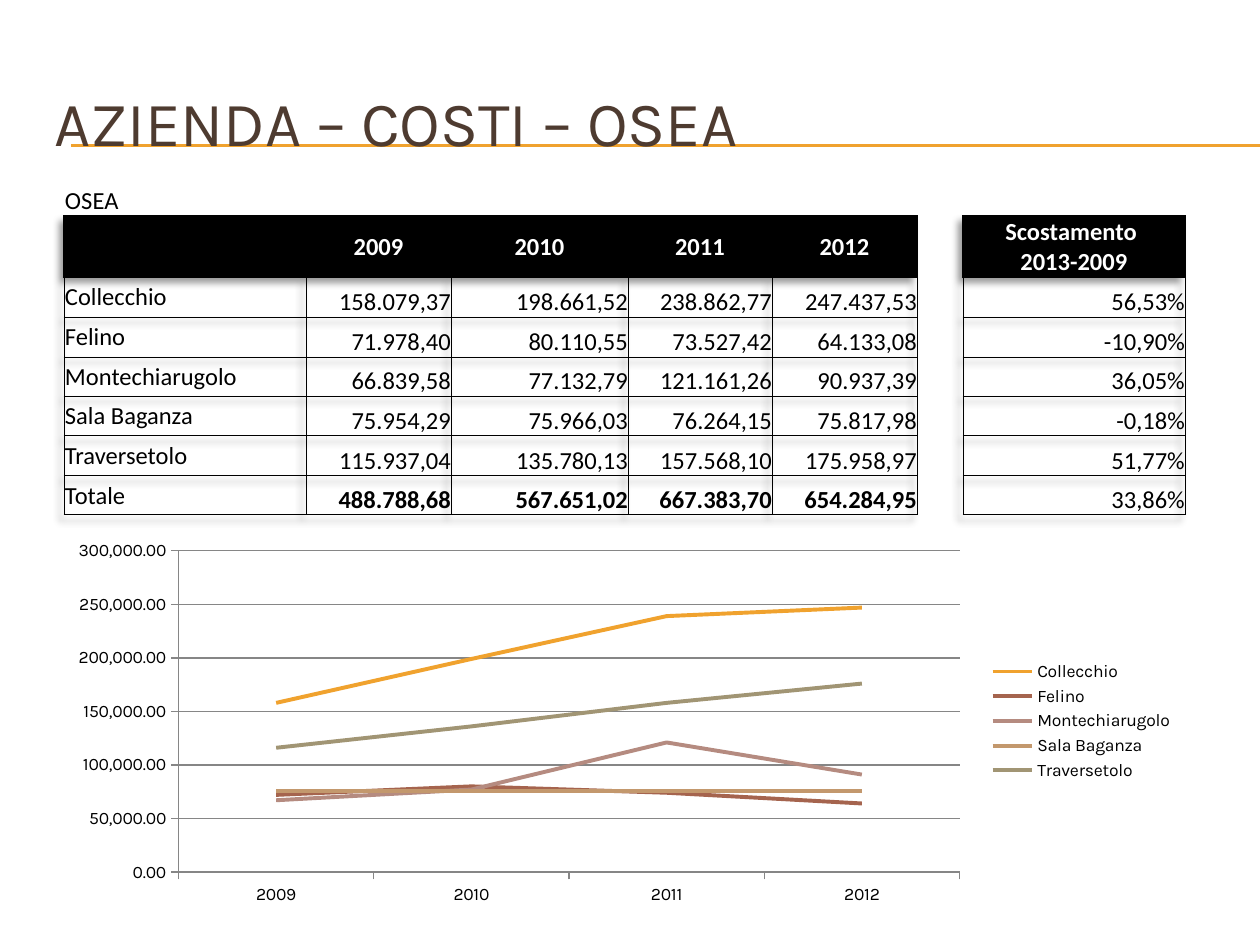
from collections import namedtuple
from lxml.etree import SubElement
from pptx import Presentation
from pptx.chart.data import CategoryChartData as ChartData
from pptx.dml.color import RGBColor as RGB
from pptx.enum.chart import XL_CHART_TYPE as Kind, XL_LEGEND_POSITION as Spot
from pptx.enum.chart import XL_TICK_MARK as Tick
from pptx.enum.shapes import MSO_CONNECTOR as Link
from pptx.enum.text import MSO_ANCHOR as Anchor, PP_ALIGN as Align
from pptx.oxml import parse_xml
from pptx.oxml.ns import nsdecls, qn
from pptx.util import Pt

Theme = namedtuple("Theme", "head body title cell chart ink black white gold grid lines")
theme = Theme(
    head="Karla", body="Calibri", title=36, cell=14, chart=10,
    ink="4E3B30", black="000000", white="FFFFFF", gold="F0A22E", grid="868686",
    lines=["F0A22E", "A5644E", "B58B80", "C3986D", "A19574"],
)
SCALE = 914400 / 126


def px(*nums):
    return [round(n * SCALE) for n in nums]


def write(para, text, font, size, color, bold=False):
    run = para.add_run()
    run.text = text
    run.font.name = font
    run.font.size = Pt(size)
    run.font.bold = bold
    run.font.color.rgb = RGB.from_string(color)


years = ["2009", "2010", "2011", "2012"]
costs = [
    ["Collecchio", "158.079,37", "198.661,52", "238.862,77", "247.437,53", "", "56,53%"],
    ["Felino", "71.978,40", "80.110,55", "73.527,42", "64.133,08", "", "-10,90%"],
    ["Montechiarugolo", "66.839,58", "77.132,79", "121.161,26", "90.937,39", "", "36,05%"],
    ["Sala Baganza", "75.954,29", "75.966,03", "76.264,15", "75.817,98", "", "-0,18%"],
    ["Traversetolo", "115.937,04", "135.780,13", "157.568,10", "175.958,97", "", "51,77%"],
    ["Totale", "488.788,68", "567.651,02", "667.383,70", "654.284,95", "", "33,86%"],
]

prs = Presentation()
prs.slide_width, prs.slide_height = px(1260, 945)
slide = prs.slides.add_slide(prs.slide_layouts[6])
shapes = slide.shapes

# Double rule under the title
for y in (145, 146):
    rule = shapes.add_connector(Link.STRAIGHT, *px(71, y, 1260, y))
    rule.line.color.rgb = RGB.from_string(theme.gold)
    rule.line.width = Pt(0.75)
    SubElement(rule._element.spPr, qn("a:effectLst"))

# Title
frame = shapes.add_textbox(*px(42, 63, 1197, 116)).text_frame
frame.word_wrap = True
frame.vertical_anchor = Anchor.MIDDLE
write(frame.paragraphs[0], "AZIENDA – COSTI – OSEA", theme.head, theme.title, theme.ink)

# Cost table: unstyled, with a soft shadow
widths = [242, 145, 177, 144, 145, 46, 222]
heights = [41, 61, 40, 40, 39, 40, 40, 39]
GAP = 5
rows = [["OSEA"] + [""] * 6, [""] + years + ["", "Scostamento \n2013-2009"]] + costs
table = shapes.add_table(
    len(rows), len(widths), *px(64, 175, sum(widths), sum(heights))).table
table.first_row = table.horz_banding = False
props = table._tbl.tblPr
props.find(qn("a:tableStyleId")).text = "{2D5ABB26-0587-4C30-8999-92F81FD0307C}"
props.insert(0, parse_xml(
    f'<a:effectLst {nsdecls("a")}><a:outerShdw blurRad="50800" dist="50800" dir="7800000">'
    f'<a:srgbClr val="{theme.black}"><a:alpha val="40000"/></a:srgbClr>'
    '</a:outerShdw></a:effectLst>'))
for col, width in zip(table.columns, px(*widths)):
    col.width = width
for row, height in zip(table.rows, px(*heights)):
    row.height = height

for r, texts in enumerate(rows):
    for c, text in enumerate(texts):
        cell = table.cell(r, c)
        header, number = r == 1, r > 1 and c > 0
        inset = 0 if number or not text else 1
        cell.margin_left, cell.margin_right, cell.margin_top = px(inset, inset, inset)
        cell.margin_bottom = 0
        cell.vertical_anchor = Anchor.BOTTOM if number or r == 0 else Anchor.MIDDLE

        # Borders
        if c == GAP:
            sides = "LR" if r else ""
        else:
            sides = "LRTB" if r else "B"
        weight = 1 if r < 2 else 0.5
        for side in "LRTB":
            edge = SubElement(cell._tc.get_or_add_tcPr(), qn("a:ln" + side))
            if side in sides:
                edge.set("w", str(Pt(weight)))
                paint = SubElement(edge, qn("a:solidFill"))
                SubElement(paint, qn("a:srgbClr")).set("val", theme.black)
            else:
                SubElement(edge, qn("a:noFill"))

        # Fill and text
        if header and c != GAP:
            cell.fill.solid()
            cell.fill.fore_color.rgb = RGB.from_string(theme.black)
        else:
            cell.fill.background()
        if not text:
            continue
        bold = header or (r == len(rows) - 1 and 0 < c < GAP)
        color = theme.white if header else theme.black
        frame = cell.text_frame
        for i, line in enumerate(text.split("\n")):
            para = frame.add_paragraph() if i else frame.paragraphs[0]
            if header:
                para.alignment = Align.CENTER
            elif number:
                para.alignment = Align.RIGHT
            write(para, line, theme.body, theme.cell, color, bold)

# Line chart, in whole thousands, without the total
data = ChartData(number_format="#,##0.00")
data.categories = years
for name, *cells in costs[:-1]:
    nums = [float(t.replace(".", "").replace(",", ".")) for t in cells[:4]]
    data.add_series(name, [round(n, -3) for n in nums])
chart = shapes.add_chart(Kind.LINE, *px(54, 532, 1132, 378), data).chart
chart.has_title = False
chart.font.name = theme.head
chart.font.size = Pt(theme.chart)
chart.font.color.rgb = RGB.from_string(theme.black)
chart.has_legend = True
chart.legend.position = Spot.RIGHT
chart.legend.include_in_layout = False

plot = chart.plots[0]
plot.vary_by_categories = False
for series, color in zip(plot.series, theme.lines):
    series.smooth = False
    series.format.line.color.rgb = RGB.from_string(color)
    series.format.line.width = Pt(2.25)

# Axes and grid
cats, vals = chart.category_axis, chart.value_axis
vals.minimum_scale, vals.maximum_scale, vals.major_unit = 0, 300000, 50000
vals.has_major_gridlines = True
vals.tick_labels.number_format = "#,##0.00"
vals.tick_labels.number_format_is_linked = False
for axis in (cats, vals):
    axis.major_tick_mark = Tick.OUTSIDE
for part in (cats, vals, vals.major_gridlines):
    part.format.line.color.rgb = RGB.from_string(theme.grid)
    part.format.line.width = Pt(0.75)

# Fixed plot area
area = chart._chartSpace.chart.plotArea
for old in area.findall(qn("c:layout")):
    area.remove(old)
area.insert(0, parse_xml(
    f'<c:layout {nsdecls("c")}><c:manualLayout><c:layoutTarget val="inner"/>'
    '<c:xMode val="edge"/><c:yMode val="edge"/><c:x val="0.11"/><c:y val="0.05"/>'
    '<c:w val="0.69"/><c:h val="0.85"/></c:manualLayout></c:layout>'))

prs.save("out.pptx")
